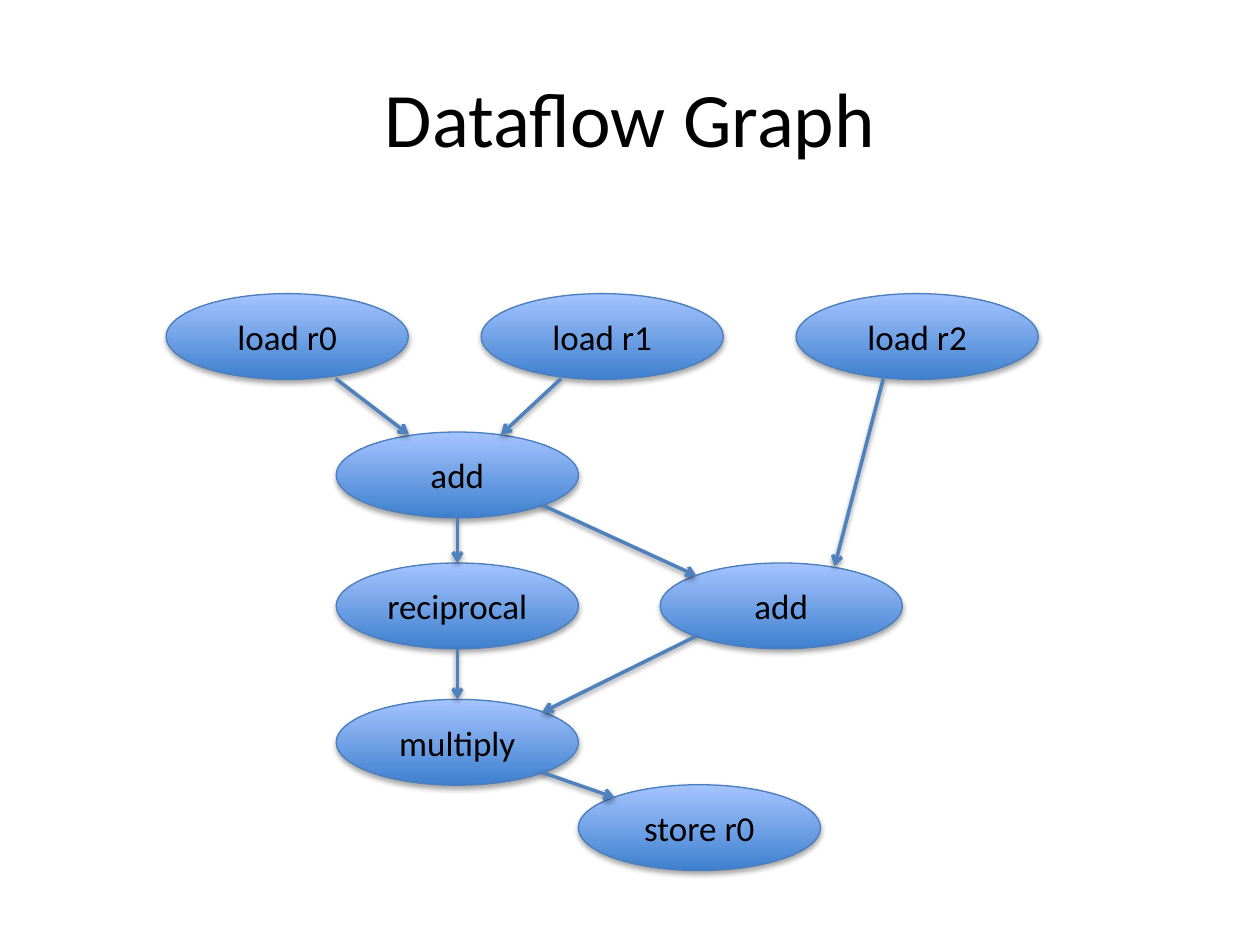
import lxml.etree
import pptx
import pptx.dml.color
import pptx.enum.shapes
import pptx.enum.text
import pptx.oxml.ns
import pptx.util

Cm = pptx.util.Cm
Pt = pptx.util.Pt

NODE_WIDTH, NODE_HEIGHT = 4.88, 1.73
LOAD_LEFT, LOAD_STEP = 3.35, 6.35
CHAIN_LEFT = 6.78
LOAD_TOP, ADD_TOP, SECOND_TOP, MULTIPLY_TOP, STORE_TOP = 5.92, 8.71, 11.35, 14.1, 15.82

# Key: label, left, top
NODES = {f"load{i}": (f"load r{i}", LOAD_LEFT + i * LOAD_STEP, LOAD_TOP) for i in range(3)}
NODES.update({
    "add": ("add", CHAIN_LEFT, ADD_TOP),
    "second add": ("add", CHAIN_LEFT + 6.53, SECOND_TOP),
    "reciprocal": ("reciprocal", CHAIN_LEFT, SECOND_TOP),
    "multiply": ("multiply", CHAIN_LEFT, MULTIPLY_TOP),
    "store": ("store r0", CHAIN_LEFT + NODE_WIDTH, STORE_TOP),
})

# Points on an ellipse, as shares of its width and height
TOP, BOTTOM = (0.5, 0), (0.5, 1)
TOP_LEFT, TOP_RIGHT = (0.15, 0.15), (0.85, 0.15)
BOTTOM_LEFT, BOTTOM_RIGHT = (0.15, 0.85), (0.85, 0.85)

EDGES = [
    ("load0", (0.7, 0.99), "add", (0.3, 0.03)),
    ("load1", (0.33, 0.99), "add", (0.68, 0.03)),
    ("add", BOTTOM, "reciprocal", TOP),
    ("load2", (0.36, 0.99), "second add", (0.72, 0.04)),
    ("add", BOTTOM_RIGHT, "second add", TOP_LEFT),
    ("reciprocal", BOTTOM, "multiply", TOP),
    ("multiply", BOTTOM_RIGHT, "store", TOP_LEFT),
    ("second add", BOTTOM_LEFT, "multiply", TOP_RIGHT),
]


def color(code):
    return pptx.dml.color.RGBColor.from_string(code)


def add_element(parent, tag, **attributes):
    return lxml.etree.SubElement(parent, pptx.oxml.ns.qn(tag), attributes)


class GraphPage:
    font = {"name": "Calibri"}
    text_color = "000000"
    gradient = ("3F80CE", "A4C4FF")
    outline, arrow_color = "4B7EBC", "4F81BD"

    def __init__(self, deck):
        self.page = deck.slides.add_slide(deck.slide_layouts[5])

    def label(self, box, text, size):
        frame = box.text_frame
        frame.vertical_anchor = pptx.enum.text.MSO_ANCHOR.MIDDLE
        para = frame.paragraphs[0]
        para.alignment = pptx.enum.text.PP_ALIGN.CENTER
        span = para.add_run()
        span.text = text
        for name, value in {**self.font, "size": Pt(size)}.items():
            setattr(span.font, name, value)
        span.font.color.rgb = color(self.text_color)

    def shadow(self, shape, opacity, distance):
        """Add a soft black shadow that falls straight down."""
        effects = add_element(shape._element.spPr, "a:effectLst")
        outer = add_element(effects, "a:outerShdw", blurRad=str(Pt(3.1)),
                            dist=str(Pt(distance)), dir="5400000", rotWithShape="0")
        black = add_element(outer, "a:srgbClr", val="000000")
        add_element(black, "a:alpha", val=str(opacity * 1000))

    def title(self, text):
        box = self.page.shapes.title
        place = {"left": 1.27, "top": 0.76, "width": 22.86, "height": 3.18}
        for name, value in place.items():
            setattr(box, name, Cm(value))
        self.label(box, text, 44)

    def node(self, text, left, top):
        box = self.page.shapes.add_shape(
            pptx.enum.shapes.MSO_SHAPE.OVAL,
            Cm(left), Cm(top), Cm(NODE_WIDTH), Cm(NODE_HEIGHT))
        box.fill.gradient()
        box.fill.gradient_angle = 90
        for stop, code, position in zip(box.fill.gradient_stops, self.gradient, (0, 1)):
            stop.color.rgb = color(code)
            stop.position = position
        box.line.color.rgb = color(self.outline)
        box.line.width = Pt(0.75)
        self.shadow(box, 35, 1.8)
        self.label(box, text, 20)

    def arrow(self, start, end):
        connector = self.page.shapes.add_connector(
            pptx.enum.shapes.MSO_CONNECTOR.STRAIGHT,
            *(Cm(length) for length in (*start, *end)))
        connector.line.color.rgb = color(self.arrow_color)
        connector.line.width = Pt(2)
        line = connector._element.spPr.find(pptx.oxml.ns.qn("a:ln"))
        add_element(line, "a:tailEnd", type="arrow")
        self.shadow(connector, 38, 1.6)


def point_on(node, share):
    """Return the place, in centimetres, at a share of a node's box."""
    _, left, top = NODES[node]
    return left + share[0] * NODE_WIDTH, top + share[1] * NODE_HEIGHT


def main():
    deck = pptx.Presentation()
    deck.slide_width, deck.slide_height = Cm(25.4), Cm(19.05)
    graph = GraphPage(deck)
    graph.title("Dataflow Graph")
    for node in NODES.values():
        graph.node(*node)
    for source, exit_share, target, entry_share in EDGES:
        graph.arrow(point_on(source, exit_share), point_on(target, entry_share))
    deck.save("out.pptx")


if __name__ == "__main__":
    main()
